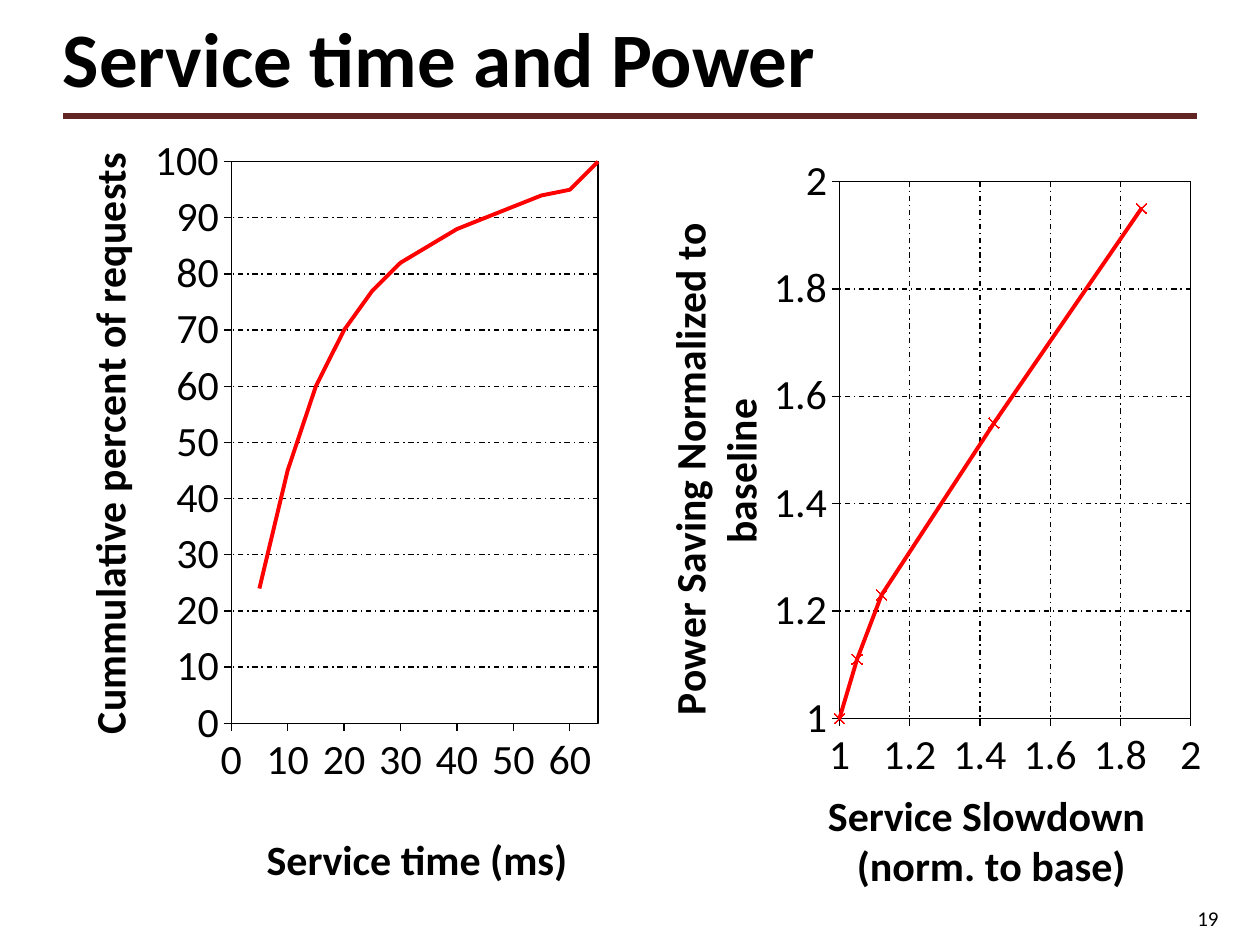
"""Build the service time and power slide with its two scatter charts."""
from lxml.etree import SubElement as Sub
from pptx import Presentation
from pptx.chart.data import XyChartData
from pptx.dml.color import RGBColor
from pptx.enum.chart import (XL_CHART_TYPE as Kind, XL_MARKER_STYLE as Mark,
                             XL_TICK_MARK as Tick)
from pptx.enum.dml import MSO_LINE as Dash
from pptx.enum.shapes import MSO_CONNECTOR as Link
from pptx.enum.text import MSO_ANCHOR as Anchor, PP_ALIGN as Align
from pptx.oxml import parse_xml
from pptx.oxml.ns import nsdecls, qn
from pptx.util import Inches, Pt

BLACK = RGBColor(0, 0, 0)
RED = RGBColor(0xFF, 0, 0)
MAROON = RGBColor(0x63, 0x25, 0x23)
FACE = "Calibri"


def apply(item, **vals):
    """Set each named value on the item."""
    for key, val in vals.items():
        setattr(item, key, val)


def style(font, size, bold=False):
    """Give a font the slide's face and colour."""
    apply(font, name=FACE, size=Pt(size), bold=bold)
    font.color.rgb = BLACK


def ink(line, color=BLACK, width=0.75, dash=None):
    """Colour a line and set its width and dash."""
    line.color.rgb = color
    apply(line, width=Pt(width), dash_style=dash)


def add_text(slide, box, text, size, **look):
    """Add a one-line text box."""
    frame = slide.shapes.add_textbox(*map(Inches, box)).text_frame
    apply(frame, word_wrap=True, vertical_anchor=Anchor.MIDDLE)
    para = frame.paragraphs[0]
    para.text = text
    apply(para, **{key: look[key] for key in ("alignment", "line_spacing")
                   if key in look})
    style(para.runs[0].font, size, look.get("bold", False))


def add_rule(slide, left, right, top):
    """Draw the rule under the title."""
    rule = slide.shapes.add_connector(Link.STRAIGHT, Inches(left), Inches(top),
                                      Inches(right), Inches(top))
    ink(rule.line, MAROON, 3)
    Sub(rule._element.spPr, qn("a:effectLst"))


def layout(spots, inner=False):
    """Make a manual chart layout from fractions."""
    node = parse_xml(f"<c:layout {nsdecls('c')}><c:manualLayout/></c:layout>")
    vals = [("layoutTarget", "inner")] if inner else []
    vals += [("xMode", "edge"), ("yMode", "edge"), *zip("xywh", spots)]
    for tag, val in vals:
        Sub(node[0], qn(f"c:{tag}")).set("val", str(val))
    return node


def set_axis(axis, title, spot, low, high, step, grid, form="General"):
    """Format one axis, its grid and its title."""
    apply(axis, minimum_scale=low, maximum_scale=high, major_unit=step,
          major_tick_mark=Tick.OUTSIDE, minor_tick_mark=Tick.NONE,
          has_major_gridlines=grid)
    ink(axis.format.line)
    if grid:
        ink(axis.major_gridlines.format.line, dash=Dash.DASH_DOT)
    apply(axis.tick_labels, number_format=form, number_format_is_linked=False)
    style(axis.tick_labels.font, 24)
    head = axis.axis_title
    head.text_frame.text = title
    for para in head.text_frame.paragraphs:
        style(para.runs[0].font, 24, True)
    node = head._element
    for old in node.findall(qn("c:layout")):
        node.remove(old)
    node.find(qn("c:tx")).addnext(layout(spot))


def frame_plot(chart, spots):
    """Place the plot area and outline it in black."""
    area = chart._chartSpace.chart.plotArea
    for old in area.findall(qn("c:layout")):
        area.remove(old)
    area.insert(0, layout(spots, True))
    area.append(parse_xml(
        f'<c:spPr {nsdecls("c", "a")}><a:noFill/><a:ln w="9525"><a:solidFill>'
        f'<a:srgbClr val="{BLACK}"/></a:solidFill></a:ln></c:spPr>'))


def add_curve(slide, box, kind, points, plot, across, up, marks=False):
    """Add a scatter chart with one red series."""
    data = XyChartData()
    row = data.add_series("Series 1")
    for x, y in points:
        row.add_data_point(x, y)
    chart = slide.shapes.add_chart(kind, *map(Inches, box), data).chart
    apply(chart, has_legend=False, has_title=False)
    style(chart.font, 24)
    chart.plots[0].vary_by_categories = False
    curve = chart.plots[0].series[0]
    curve.smooth = not marks
    ink(curve.format.line, RED, 2.25)
    curve.marker.style = Mark.X if marks else Mark.NONE
    if marks:
        curve.marker.size = 6
        curve.marker.format.fill.background()
        ink(curve.marker.format.line, RED)
    set_axis(chart.category_axis, **across)
    set_axis(chart.value_axis, **up)
    frame_plot(chart, plot)


def main():
    """Build and save the slide."""
    deck = Presentation()
    apply(deck, slide_width=Inches(10), slide_height=Inches(7.5))
    slide = deck.slides.add_slide(deck.slide_layouts[6])
    add_rule(slide, 0.5, 9.5, 0.92)
    add_text(slide, (0.4, 0.08, 9.27, 0.83), "Service time and Power", 44,
             bold=True, line_spacing=0.9)
    add_text(slide, (8.97, 7.14, 0.8, 0.3), "19", 12, alignment=Align.RIGHT)
    shares = (24, 45, 60, 70, 77, 82, 85, 88, 90, 92, 94, 95, 100)
    add_curve(
        slide, (0.4, 1.08, 4.6, 6.06), Kind.XY_SCATTER_SMOOTH_NO_MARKERS,
        zip(range(5, 70, 5), shares), (0.312, 0.034, 0.633, 0.743),
        dict(title="Service time (ms)", spot=(0.36, 0.91),
             low=0, high=65, step=10, grid=False),
        dict(title="Cummulative percent of requests", spot=(0.04, 0.02),
             low=0, high=100, step=10, grid=True, form="#,##0"))
    span = dict(low=1, high=2, step=0.2, grid=True)
    savings = ((1, 1), (1.05, 1.11), (1.12, 1.23), (1.44, 1.55), (1.86, 1.95))
    add_curve(
        slide, (5, 1.17, 4.67, 5.97), Kind.XY_SCATTER_LINES, savings,
        (0.356, 0.046, 0.597, 0.723),
        dict(title="Service Slowdown \n(norm. to base)", spot=(0.33, 0.86),
             **span),
        dict(title="Power Saving Normalized to baseline", spot=(0.04, 0.1),
             **span), marks=True)
    deck.save("out.pptx")


if __name__ == "__main__":
    main()
